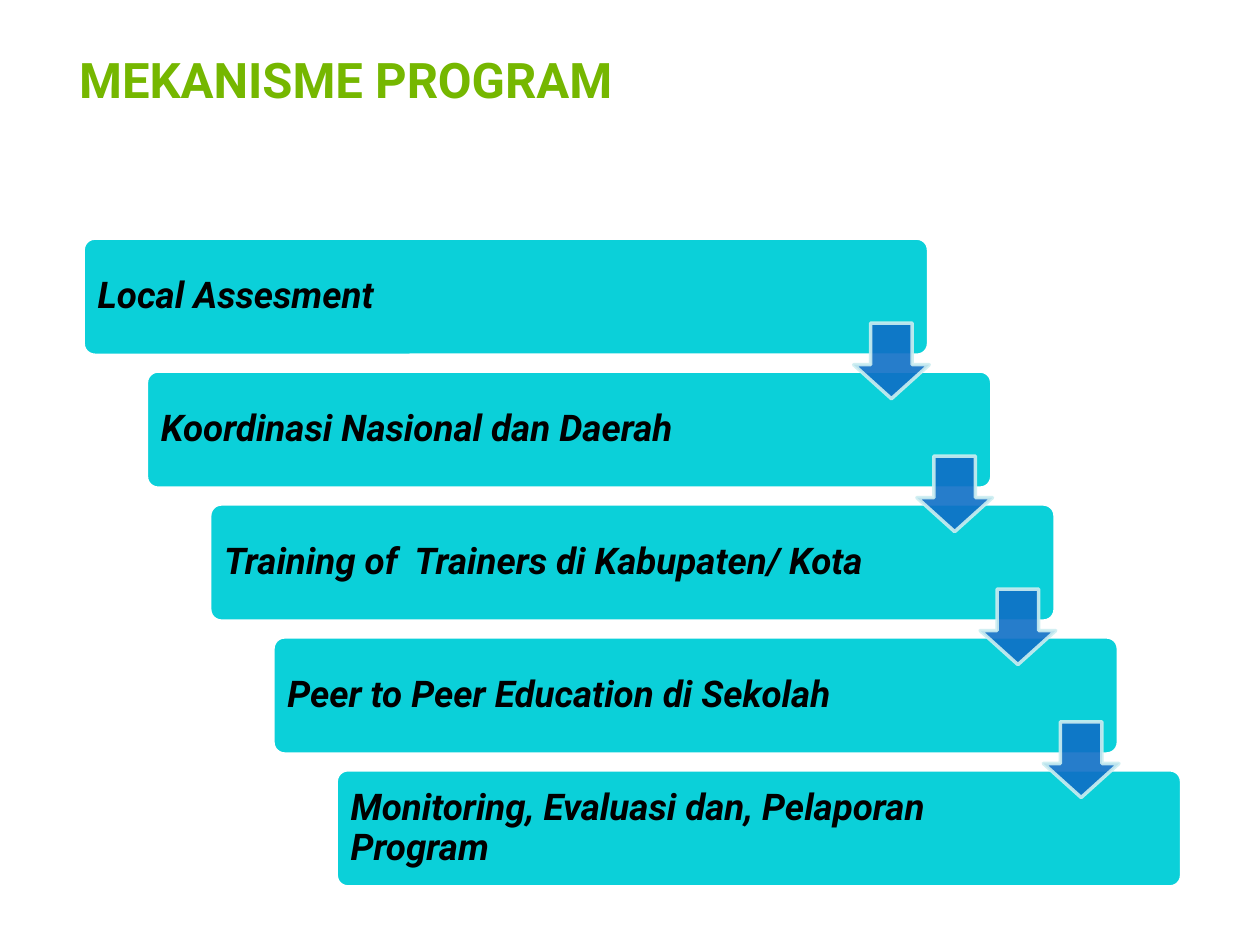
import pptx
import pptx.util
import pptx.dml.color
import pptx.enum.shapes
import pptx.enum.text
import pptx.oxml.ns
import lxml.etree

SHAPES = pptx.enum.shapes.MSO_SHAPE
ANCHORS = pptx.enum.text.MSO_ANCHOR
COLUMNS, ROWS = 100, 75


def color(hex_string):
    return pptx.dml.color.RGBColor.from_string(hex_string)


class Deck:
    font = "Roboto"
    title_color = "75B700"
    step_color = "0BD0D9"
    step_line = "FFFFFF"
    step_text = "000000"
    arrow_color = "0F6FC6"
    arrow_line = "CCEEF1"

    def __init__(self):
        self.presentation = pptx.Presentation()
        self.presentation.slide_width = pptx.util.Inches(10)
        self.presentation.slide_height = pptx.util.Inches(7.5)
        self.slide = self.presentation.slides.add_slide(self.presentation.slide_layouts[6])

    def cells(self, left, top, width, height):
        column = self.presentation.slide_width / COLUMNS
        row = self.presentation.slide_height / ROWS
        return [round(n * unit) for n, unit in zip((left, top, width, height), (column, row) * 2)]

    def text(self, place, wording, size, hex_string, anchor, spacing, italic=None):
        frame = self.slide.shapes.add_textbox(*self.cells(*place)).text_frame
        frame.word_wrap = True
        frame.vertical_anchor = anchor
        paragraph = frame.paragraphs[0]
        paragraph.line_spacing = spacing
        run = paragraph.add_run()
        run.text = wording
        run.font.name = self.font
        run.font.size = pptx.util.Pt(size)
        run.font.bold = True
        run.font.italic = italic
        run.font.color.rgb = color(hex_string)
        return frame

    def shape(self, kind, place, adjustments, fill, line):
        shape = self.slide.shapes.add_shape(kind, *self.cells(*place))
        shape.shadow.inherit = False
        for index, value in enumerate(adjustments):
            shape.adjustments[index] = value
        shape.fill.solid()
        shape.fill.fore_color.rgb = color(fill)
        shape.line.color.rgb = color(line)
        shape.line.width = pptx.util.Pt(2)
        return shape

    def title(self, place, wording):
        self.text(place, wording, 28, self.title_color, ANCHORS.TOP, pptx.util.Pt(26.6))

    def step(self, left, top, wording):
        self.shape(SHAPES.ROUNDED_RECTANGLE, (left, top, 67.1, 9.3), [0.1],
                   self.step_color, self.step_line)
        frame = self.text((left + 0.25, top + 0.3, 55.6, 8.7), wording, 21,
                          self.step_text, ANCHORS.MIDDLE, 0.9, True)
        inset = pptx.util.Inches(0.09)
        frame.margin_left = frame.margin_right = inset
        frame.margin_top = frame.margin_bottom = inset

    def arrow(self, left, top):
        arrow = self.shape(SHAPES.DOWN_ARROW, (left, top, 6, 6), [0.55, 0.45],
                           self.arrow_color, self.arrow_line)
        qn = pptx.oxml.ns.qn
        for tint in arrow.element.spPr.iter(qn("a:srgbClr")):
            lxml.etree.SubElement(tint, qn("a:alpha")).set("val", "90000")


def main():
    deck = Deck()
    deck.title((5.3, 4.4, 78.5, 11.7), "MEKANISME PROGRAM")
    steps = [
        "Local Assesment",
        "Koordinasi Nasional dan Daerah",
        "Training of  Trainers di Kabupaten/ Kota",
        "Peer to Peer Education di Sekolah",
        "Monitoring, Evaluasi dan, Pelaporan Program",
    ]
    shift, drop = 5.02, 10.55
    for level, wording in enumerate(steps):
        deck.step(6.6 + level * shift, 18.9 + level * drop, wording)
    for level in range(len(steps) - 1):
        deck.arrow(67.75 + level * shift, 25.65 + level * drop)
    deck.presentation.save("out.pptx")


if __name__ == "__main__":
    main()
